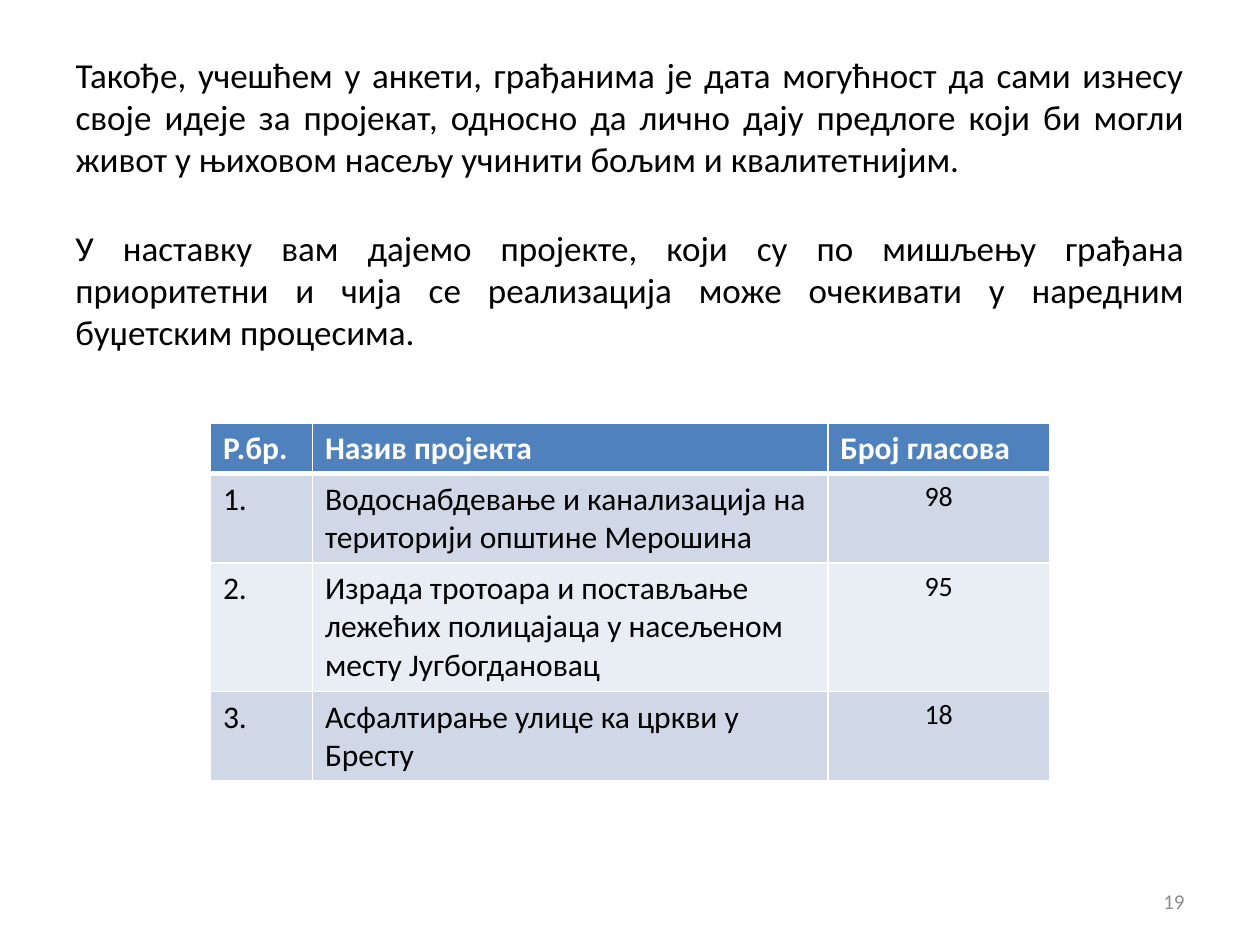
from dataclasses import dataclass

from lxml.etree import SubElement
from pptx import Presentation
from pptx.dml.color import RGBColor
from pptx.enum.text import MSO_ANCHOR, MSO_AUTO_SIZE, PP_ALIGN
from pptx.oxml.ns import qn
from pptx.util import Inches, Pt


@dataclass(frozen=True)
class Theme:
    font: str = "Calibri"
    ink: str = "000000"
    paper: str = "FFFFFF"
    muted: str = "8C8C8C"
    header: str = "4F81BD"
    bands: tuple = ("D0D8E8", "E9EDF4")
    body_size: int = 20
    table_size: int = 18
    votes_size: int = 16
    number_size: int = 12
    thin: int = 1
    thick: int = 3


INTRO = (
    "Такође, учешћем у анкети, грађанима је дата могућност да сами изнесу "
    "своје идеје за пројекат, односно да лично дају предлоге који би могли "
    "живот у њиховом насељу учинити бољим и квалитетнијим."
)
LEAD = (
    "У наставку вам дајемо пројекте, који су по мишљењу грађана приоритетни "
    "и чија се реализација може очекивати у наредним буџетским процесима."
)
HEADINGS = ("Р.бр.", "Назив пројекта", "Број гласова")
PROJECTS = (
    ("Водоснабдевање и канализација на територији општине Мерошина", 98),
    ("Израда тротоара и постављање лежећих полицајаца у насељеном месту Југбогдановац", 95),
    ("Асфалтирање улице ка цркви у Бресту", 18),
)
COLUMN_WIDTHS = (0.81, 4.09, 1.76)
ROW_HEIGHTS = (0.39, 0.71, 1.02, 0.71)


def write(frame, text, *, font, size, color, bold=False,
          align=PP_ALIGN.LEFT, anchor=MSO_ANCHOR.TOP):
    frame.word_wrap = True
    frame.vertical_anchor = anchor
    para = frame.paragraphs[0]
    para.alignment = align
    span = para.add_run()
    span.text = text
    span.font.name = font
    span.font.size = Pt(size)
    span.font.bold = bold
    span.font.color.rgb = RGBColor.from_string(color)


class SlideBuilder:
    def __init__(self, page, theme):
        self.page = page
        self.theme = theme

    def title(self, text, left, top, width, height):
        box = self.page.shapes.title
        box.left, box.top = Inches(left), Inches(top)
        box.width, box.height = Inches(width), Inches(height)
        box.text_frame.auto_size = MSO_AUTO_SIZE.NONE
        write(box.text_frame, text, font=self.theme.font, size=self.theme.body_size,
              color=self.theme.ink, align=PP_ALIGN.JUSTIFY, anchor=MSO_ANCHOR.MIDDLE)

    def text(self, text, left, top, width, height, **style):
        box = self.page.shapes.add_textbox(
            Inches(left), Inches(top), Inches(width), Inches(height))
        write(box.text_frame, text, font=self.theme.font, **style)

    def table(self, rows, left, top, widths, heights):
        frame = self.page.shapes.add_table(
            len(rows), len(widths), Inches(left), Inches(top),
            Inches(sum(widths)), Inches(sum(heights)))
        table = frame.table
        for column, width in zip(table.columns, widths):
            column.width = Inches(width)
        for row, height in zip(table.rows, heights):
            row.height = Inches(height)
        for row_index, values in enumerate(rows):
            for column_index, value in enumerate(values):
                self.cell(table.cell(row_index, column_index), value,
                          row_index, column_index == len(widths) - 1)

    def cell(self, cell, value, row_index, is_votes):
        theme = self.theme
        is_header = row_index == 0
        centred = is_votes and not is_header
        self.borders(cell,
                     top=theme.thick if row_index == 1 else theme.thin,
                     bottom=theme.thick if is_header else theme.thin)
        cell.fill.solid()
        fill = theme.header if is_header else theme.bands[(row_index - 1) % 2]
        cell.fill.fore_color.rgb = RGBColor.from_string(fill)
        write(cell.text_frame, value, font=theme.font, bold=is_header,
              size=theme.votes_size if centred else theme.table_size,
              color=theme.paper if is_header else theme.ink,
              align=PP_ALIGN.CENTER if centred else PP_ALIGN.LEFT)

    def borders(self, cell, top, bottom):
        properties = cell._tc.get_or_add_tcPr()
        thin = self.theme.thin
        for side, weight in (("L", thin), ("R", thin), ("T", top), ("B", bottom)):
            line = SubElement(properties, qn(f"a:ln{side}"), w=str(Pt(weight)))
            fill = SubElement(line, qn("a:solidFill"))
            SubElement(fill, qn("a:srgbClr"), val=self.theme.paper)


def main():
    deck = Presentation()
    deck.slide_width, deck.slide_height = Inches(10), Inches(7.5)
    theme = Theme()
    builder = SlideBuilder(deck.slides.add_slide(deck.slide_layouts[5]), theme)

    builder.title(INTRO, 0.5, 0.3, 9, 1.25)
    builder.text(LEAD, 0.5, 1.75, 9, 1.2, size=theme.body_size,
                 color=theme.ink, align=PP_ALIGN.JUSTIFY)
    builder.text("19", 7.17, 6.95, 2.33, 0.4, size=theme.number_size,
                 color=theme.muted, align=PP_ALIGN.RIGHT, anchor=MSO_ANCHOR.MIDDLE)
    rows = [HEADINGS] + [
        (f"{number}.", name, str(votes))
        for number, (name, votes) in enumerate(PROJECTS, 1)
    ]
    builder.table(rows, 1.67, 3.36, COLUMN_WIDTHS, ROW_HEIGHTS)
    deck.save("out.pptx")


if __name__ == "__main__":
    main()
